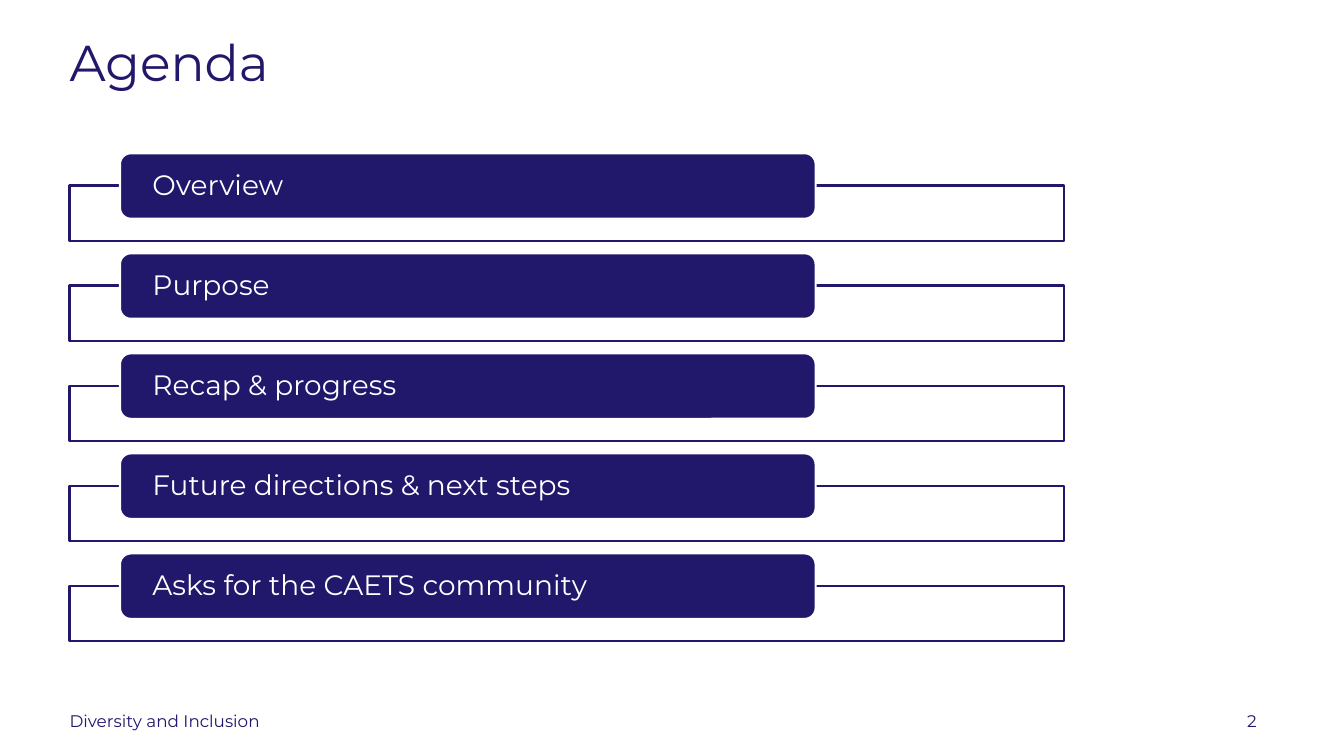
import pptx
import pptx.util
import pptx.dml.color
import pptx.enum.shapes
import pptx.enum.text

Inches = pptx.util.Inches
Shape = pptx.enum.shapes.MSO_SHAPE
Align = pptx.enum.text.PP_ALIGN
Anchor = pptx.enum.text.MSO_ANCHOR

NAVY = pptx.dml.color.RGBColor(0x21, 0x17, 0x6B)
WHITE = pptx.dml.color.RGBColor(0xFF, 0xFF, 0xFF)
FONT = "Montserrat"

TITLE = "Agenda"
TOPICS = [
    "Overview",
    "Purpose",
    "Recap & progress",
    "Future directions & next steps",
    "Asks for the CAETS community",
]
FOOTER = "Diversity and Inclusion"
PAGE_NUMBER = "2"

LEFT = 0.69
FIRST_FRAME, LAST_FRAME = 1.84, 5.81
FRAME_WIDTH, FRAME_HEIGHT = 9.86, 0.55
PILL_INDENT, PILL_RISE = 0.5, 0.32
PILL_WIDTH, PILL_HEIGHT = 6.9, 0.65
PILL_INSET = 0.29


def write(box, text, size, color=NAVY, align=Align.LEFT, anchor=Anchor.MIDDLE, inset=0, spacing=1.0):
    frame = box.text_frame
    frame.word_wrap = True
    frame.auto_size = pptx.enum.text.MSO_AUTO_SIZE.NONE
    frame.vertical_anchor = anchor
    frame.margin_left = frame.margin_right = Inches(inset)
    frame.margin_top = frame.margin_bottom = 0
    para = frame.paragraphs[0]
    para.alignment = align
    para.line_spacing = spacing
    span = para.add_run()
    span.text = text
    span.font.name = FONT
    span.font.size = pptx.util.Pt(size)
    span.font.color.rgb = color


def add_box(page, kind, left, top, width, height, fill, line):
    box = page.shapes.add_shape(kind, Inches(left), Inches(top), Inches(width), Inches(height))
    box.shadow.inherit = False
    box.fill.solid()
    box.fill.fore_color.rgb = fill
    box.line.color.rgb = line
    box.line.width = pptx.util.Pt(1.5)
    return box


def main():
    deck = pptx.Presentation()
    deck.slide_width, deck.slide_height = Inches(13.33), Inches(7.5)
    page = deck.slides.add_slide(deck.slide_layouts[5])

    title = page.shapes.title
    title.left, title.top = Inches(LEFT), Inches(0.38)
    title.width, title.height = Inches(10.95), Inches(0.66)
    write(title, TITLE, 36, anchor=Anchor.TOP, spacing=0.9)

    step = (LAST_FRAME - FIRST_FRAME) / (len(TOPICS) - 1)
    for index, topic in enumerate(TOPICS):
        top = FIRST_FRAME + index * step
        add_box(page, Shape.RECTANGLE, LEFT, top, FRAME_WIDTH, FRAME_HEIGHT, WHITE, NAVY)
        pill = add_box(page, Shape.ROUNDED_RECTANGLE, LEFT + PILL_INDENT, top - PILL_RISE,
                       PILL_WIDTH, PILL_HEIGHT, NAVY, WHITE)
        write(pill, topic, 20, color=WHITE, inset=PILL_INSET, spacing=0.9)

    for text, left, width, align in [
        (FOOTER, LEFT, 4.5, Align.LEFT),
        (PAGE_NUMBER, 12.19, 0.45, Align.CENTER),
    ]:
        box = page.shapes.add_textbox(Inches(left), Inches(7.05), Inches(width), Inches(0.2))
        write(box, text, 12, align=align)

    deck.save("out.pptx")


if __name__ == "__main__":
    main()
